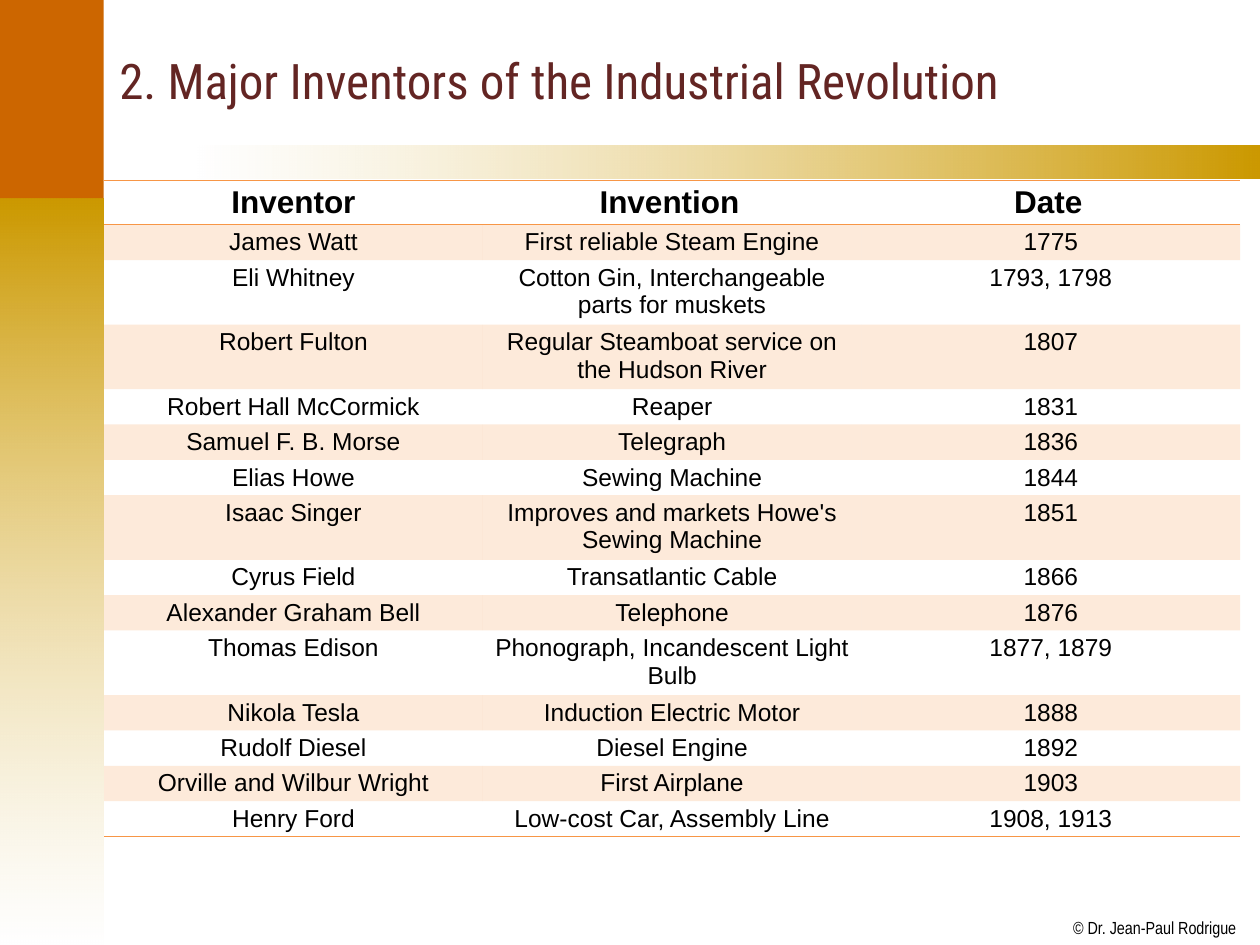
from dataclasses import dataclass

from lxml.etree import SubElement
from pptx import Presentation
from pptx.dml.color import RGBColor
from pptx.enum.shapes import MSO_SHAPE as Shape
from pptx.enum.text import MSO_ANCHOR as Anchor, PP_ALIGN as Align
from pptx.oxml import parse_xml
from pptx.oxml.ns import nsdecls, qn
from pptx.util import Pt


@dataclass(frozen=True)
class Theme:
    title_color: RGBColor = RGBColor.from_string("632523")
    text: RGBColor = RGBColor.from_string("000000")
    white: RGBColor = RGBColor.from_string("FFFFFF")
    gold: RGBColor = RGBColor.from_string("CC9900")
    rust: RGBColor = RGBColor.from_string("CC6600")
    accent: RGBColor = RGBColor.from_string("F79646")
    title_font: str = "Roboto Condensed"
    table_font: str = "Arial"
    credit_font: str = "Arial Narrow"
    title_size: int = 28
    header_size: int = 18
    body_size: int = 14
    credit_size: int = 10


theme = Theme()
NO_STYLE_NO_GRID = "{2D5ABB26-0587-4C30-8999-92F81FD0307C}"


def set_font(paragraph, name, size, color, bold=False):
    for run in paragraph.runs:
        run.font.name = name
        run.font.size = Pt(size)
        run.font.color.rgb = color
        run.font.bold = bold


def add_rule(cell, side):
    """Draw a thin accent border on the cell; side is "T" or "B"."""
    border = parse_xml(
        f'<a:ln{side} {nsdecls("a")} w="12700"><a:solidFill>'
        f'<a:srgbClr val="{theme.accent}"/></a:solidFill></a:ln{side}>')
    properties = cell._tc.get_or_add_tcPr()
    # Borders come before the fill, top before bottom.
    position = len(properties.findall(qn("a:lnT")))
    properties.insert(position, border)


presentation = Presentation()
presentation.slide_width, presentation.slide_height = Pt(720), Pt(540)
slide = presentation.slides.add_slide(presentation.slide_layouts[5])

# Side column and the band under the title: (left, top, width, height, colours, angle)
decorations = [
    (-0.7, 113.3, 60, 426.7, (theme.gold, theme.white), 270),
    (113, 83, 607, 19.3, (theme.white, theme.gold), 0),
    (-0.7, -0.7, 60, 114, (theme.rust,), None),
]
for left, top, width, height, colors, angle in decorations:
    shape = slide.shapes.add_shape(
        Shape.RECTANGLE, Pt(left), Pt(top), Pt(width), Pt(height))
    shape.shadow.inherit = False
    shape.line.fill.background()
    if angle is None:
        shape.fill.solid()
        shape.fill.fore_color.rgb = colors[0]
    else:
        shape.fill.gradient()
        shape.fill.gradient_angle = angle
        for stop, color, position in zip(shape.fill.gradient_stops, colors, (0, 1)):
            stop.color.rgb = color
            stop.position = position
        # The white end is half transparent.
        for color_element in shape._element.spPr.iter(qn("a:srgbClr")):
            if color_element.get("val") == str(theme.white):
                SubElement(color_element, qn("a:alpha"), val="50000")

title = slide.shapes.title
title.left, title.top, title.width, title.height = Pt(61), Pt(8), Pt(647), Pt(75)
title.text_frame.text = "2. Major Inventors of the Industrial Revolution"
title.text_frame.vertical_anchor = Anchor.MIDDLE
title_paragraph = title.text_frame.paragraphs[0]
title_paragraph.alignment = Align.LEFT
set_font(title_paragraph, theme.title_font, theme.title_size, theme.title_color)

credit = slide.shapes.add_textbox(Pt(613.2), Pt(524), Pt(94), Pt(12)).text_frame
credit.margin_left = credit.margin_right = credit.margin_top = credit.margin_bottom = 0
credit.word_wrap = False
credit.text = "© Dr. Jean-Paul Rodrigue"
set_font(credit.paragraphs[0], theme.credit_font, theme.credit_size, theme.text)

rows = [
    ("Inventor", "Invention", "Date"),
    ("James Watt", "First reliable Steam Engine", "1775"),
    ("Eli Whitney", "Cotton Gin, Interchangeable parts for muskets", "1793, 1798"),
    ("Robert Fulton", "Regular Steamboat service on the Hudson River", "1807"),
    ("Robert Hall McCormick", "Reaper", "1831"),
    ("Samuel F. B. Morse", "Telegraph", "1836"),
    ("Elias Howe", "Sewing Machine", "1844"),
    ("Isaac Singer", "Improves and markets Howe's Sewing Machine", "1851"),
    ("Cyrus Field", "Transatlantic Cable", "1866"),
    ("Alexander Graham Bell", "Telephone", "1876"),
    ("Thomas Edison", "Phonograph, Incandescent Light Bulb", "1877, 1879"),
    ("Nikola Tesla", "Induction Electric Motor", "1888"),
    ("Rudolf Diesel", "Diesel Engine", "1892"),
    ("Orville and Wilbur Wright", "First Airplane", "1903"),
    ("Henry Ford", "Low-cost Car, Assembly Line", "1908, 1913"),
]
HEADER_HEIGHT, ONE_LINE, TWO_LINES = 25.2, 20.23, 35.95
LONGEST_LINE = 30  # characters that fit on one line of the middle column
heights = [HEADER_HEIGHT] + [
    TWO_LINES if len(invention) > LONGEST_LINE else ONE_LINE
    for _, invention, _ in rows[1:]]

table = slide.shapes.add_table(
    len(rows), 3, Pt(59.5), Pt(103), Pt(649.2), Pt(sum(heights))).table
table.first_row = table.horz_banding = False
table._tbl.tblPr.find(qn("a:tableStyleId")).text = NO_STYLE_NO_GRID
for column in table.columns:
    column.width = Pt(216.4)

for row_index, (texts, height) in enumerate(zip(rows, heights)):
    table.rows[row_index].height = Pt(height)
    is_header = row_index == 0
    size = theme.header_size if is_header else theme.body_size
    for column_index, text in enumerate(texts):
        cell = table.cell(row_index, column_index)
        cell.margin_left = Pt(3)
        cell.margin_right = Pt(6 if is_header and column_index else 3)
        cell.margin_top = Pt(2.75 if is_header else 2.25)
        cell.margin_bottom = Pt(1)
        cell.text_frame.text = text
        paragraph = cell.text_frame.paragraphs[0]
        paragraph.alignment = Align.CENTER
        set_font(paragraph, theme.table_font, size, theme.text, is_header)
        if row_index % 2:
            cell.fill.solid()
            cell.fill.fore_color.rgb = theme.accent
            tint = cell._tc.tcPr.find(".//" + qn("a:srgbClr"))
            SubElement(tint, qn("a:alpha"), val="20000")
        else:
            cell.fill.background()
        if is_header:
            add_rule(cell, "T")
        if is_header or row_index == len(rows) - 1:
            add_rule(cell, "B")

presentation.save("out.pptx")
